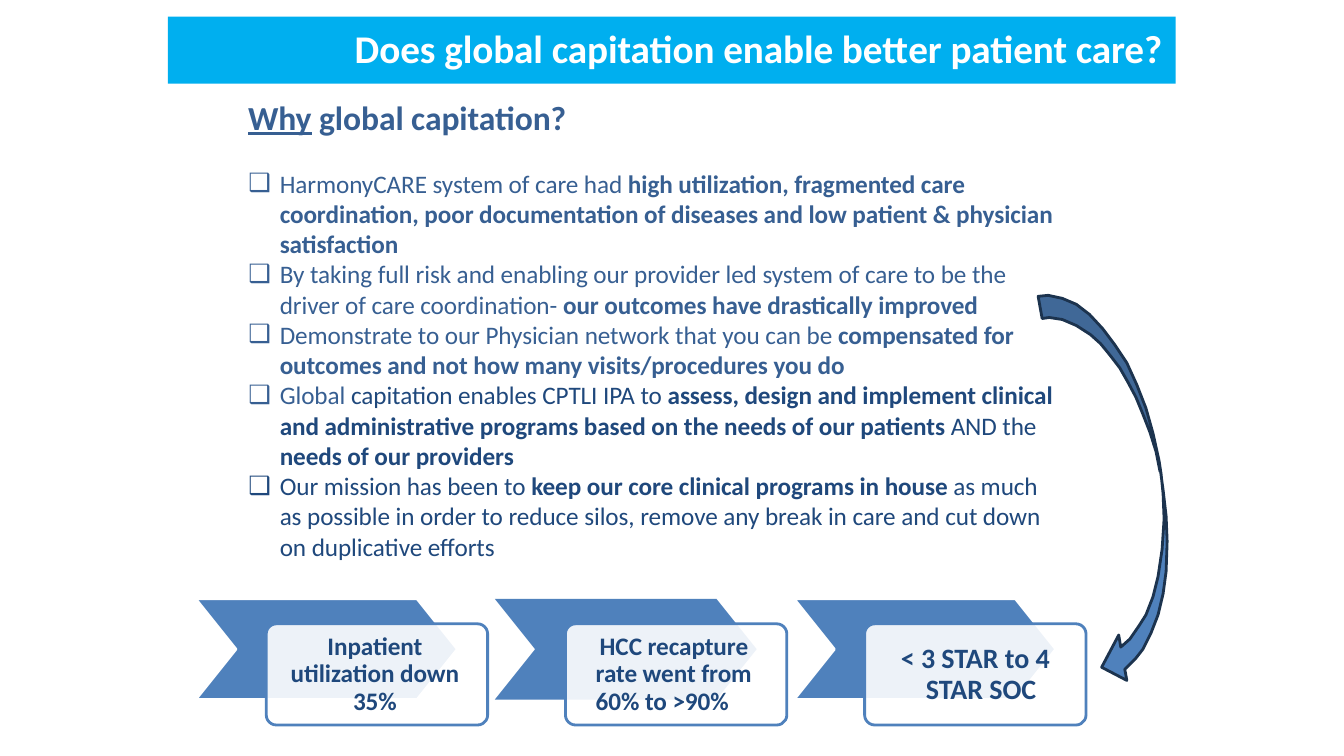
from dataclasses import dataclass
from typing import Optional

from lxml.etree import SubElement
from pptx import Presentation
from pptx.dml.color import RGBColor
from pptx.enum.shapes import MSO_SHAPE as Preset
from pptx.enum.text import MSO_ANCHOR as Anchor, MSO_AUTO_SIZE as AutoSize, PP_ALIGN as Align
from pptx.oxml.ns import qn
from pptx.util import Cm, Pt

COLORS = {
    "banner": "00AFEF",
    "white": "FFFFFF",
    "slate": "375F92",
    "navy": "1F487C",
    "blue": "4F81BC",
    "arrow_tail": "406897",
    "arrow_line": "1C334E",
}
FONT = "Calibri"


@dataclass(frozen=True)
class Span:
    text: str
    bold: bool = False
    underline: bool = False
    color: Optional[str] = None


@dataclass(frozen=True)
class Bullet:
    color: str
    spans: tuple[Span, ...]


@dataclass(frozen=True)
class Outcome:
    text: str
    size: float
    line_spacing: object
    left_inset: float
    right_inset: float = 0.3
    align: Align = Align.LEFT
    margin: float = 0
    indent: float = 0
    outlined: bool = True


BULLETS = (
    Bullet("slate", (
        Span("HarmonyCARE system of care had "),
        Span("high utilization, fragmented care coordination, poor documentation "
             "of diseases and low patient & physician satisfaction", True))),
    Bullet("slate", (
        Span("By taking full risk and enabling our provider led system of care "
             "to be the driver of care coordination- "),
        Span("our outcomes have drastically improved", True))),
    Bullet("slate", (
        Span("Demonstrate to our Physician network that you can be "),
        Span("compensated for outcomes and not how many visits/procedures you do", True))),
    Bullet("navy", (
        Span("Global ", color="slate"),
        Span("capitation enables CPTLI IPA to "),
        Span("assess, design and implement clinical and administrative programs "
             "based on the needs of our patients ", True),
        Span("AND the "),
        Span("needs of our providers", True))),
    Bullet("navy", (
        Span("Our mission has been to "),
        Span("keep our core clinical programs in house ", True),
        Span("as much as possible in order to reduce silos, remove any break "
             "in care and cut down on duplicative efforts"))),
)

OUTCOMES = (
    Outcome("Inpatient utilization down 35%", 18, 0.91, 0.4, 0.5, Align.CENTER),
    Outcome("HCC recapture rate went from 60% to >90%", 18, 0.91, 0.69,
            indent=0.1, outlined=False),
    Outcome("< 3 STAR to 4 STAR SOC", 20, Pt(22.1), 0.79, margin=0.68, indent=-0.63),
)

# Curved arrow edges, in hundredths of an inch
TAIL_INNER = [(1151, 468), (1147, 448), (1141, 429), (1134, 411), (1127, 394),
              (1119, 379), (1111, 365), (1101, 352), (1092, 341), (1082, 332),
              (1068, 323), (1054, 317), (1041, 315), (1034, 316)]
TAIL_OUTER = [(1030, 294), (1040, 293), (1054, 296), (1068, 302), (1081, 312),
              (1094, 326), (1106, 342), (1118, 360), (1128, 382), (1137, 405),
              (1144, 430), (1150, 457)]
HEAD_OUTER = [(1154, 486), (1157, 512), (1158, 537), (1157, 567), (1154, 589),
              (1149, 610), (1142, 628), (1134, 644), (1127, 653), (1116, 664)]
HEAD_TIP = [(1118, 675), (1093, 662), (1110, 630)]
HEAD_INNER = [(1112, 642), (1121, 634), (1130, 621), (1137, 610), (1144, 592),
              (1149, 572), (1153, 545), (1155, 515), (1154, 490), (1152, 470),
              (1150, 457)]
HEAD = HEAD_OUTER + HEAD_TIP + HEAD_INNER


def rgb(name: str) -> RGBColor:
    return RGBColor.from_string(COLORS[name])


def place(shape, left: float, top: float, width: float, height: float) -> None:
    shape.left, shape.top, shape.width, shape.height = map(Cm, (left, top, width, height))


def paint(shape, fill: Optional[str] = None, line: Optional[str] = None) -> None:
    shape.shadow.inherit = False
    if fill:
        shape.fill.solid()
        shape.fill.fore_color.rgb = rgb(fill)
    else:
        shape.fill.background()
    if line:
        shape.line.color.rgb = rgb(line)
        shape.line.width = Pt(2)
    else:
        shape.line.fill.background()


def set_frame(frame, left: float = 0, right: float = 0, anchor: Anchor = Anchor.TOP) -> None:
    frame.word_wrap = True
    frame.auto_size = AutoSize.NONE
    frame.vertical_anchor = anchor
    frame.margin_left, frame.margin_right = Cm(left), Cm(right)
    frame.margin_top = frame.margin_bottom = 0


def write(paragraph, spans: tuple[Span, ...], size: float, color: str, bold: Optional[bool] = None,
          margin: float = 0, indent: float = 0, align: Align = Align.LEFT) -> None:
    paragraph.alignment = align
    paragraph.space_before = Pt(0)
    font = paragraph.font
    font.name, font.size, font.bold = FONT, Pt(size), bold
    font.color.rgb = rgb(color)
    for span in spans:
        run = paragraph.add_run()
        run.text = span.text
        if bold is None:
            run.font.bold = span.bold
        if span.underline:
            run.font.underline = True
        if span.color:
            run.font.color.rgb = rgb(span.color)
        run._r.get_or_add_rPr().set("spc", "-5")
    properties = paragraph._p.get_or_add_pPr()
    properties.set("marL", str(Cm(margin)))
    properties.set("indent", str(Cm(indent)))


def set_bullet(paragraph, mark: Optional[str] = None) -> None:
    properties = paragraph._p.get_or_add_pPr()
    if mark:
        bullet = SubElement(properties, qn("a:buChar"), char=mark)
    else:
        bullet = SubElement(properties, qn("a:buNone"))
    properties.find(qn("a:defRPr")).addprevious(bullet)


def add_outcome(slide, outcome: Outcome, left: float) -> None:
    chevron = slide.shapes.add_shape(Preset.CHEVRON, Cm(left), Cm(15.09), Cm(6.6), Cm(2.54))
    chevron.adjustments[0] = 0.4
    paint(chevron, "blue", "white" if outcome.outlined else None)

    card = slide.shapes.add_shape(Preset.ROUNDED_RECTANGLE,
                                  Cm(left + 1.78), Cm(15.72), Cm(5.58), Cm(2.55))
    card.adjustments[0] = 0.1
    paint(card, "white", "blue")
    fill_color = card.fill._xPr.find(qn("a:solidFill"))[0]
    SubElement(fill_color, qn("a:alpha"), val="90000")
    frame = card.text_frame
    set_frame(frame, outcome.left_inset, outcome.right_inset, Anchor.MIDDLE)
    paragraph = frame.paragraphs[0]
    write(paragraph, (Span(outcome.text),), outcome.size, "navy", True,
          outcome.margin, outcome.indent, outcome.align)
    paragraph.line_spacing = outcome.line_spacing


def add_outline(slide, points: list[tuple[int, int]], fill: Optional[str] = None,
                line: Optional[str] = None) -> None:
    builder = slide.shapes.build_freeform(*points[0], scale=Cm(2.54) / 100)
    builder.add_line_segments(points[1:], close=fill is not None)
    paint(builder.convert_to_shape(), fill, line)


def main() -> None:
    presentation = Presentation()
    presentation.slide_width, presentation.slide_height = Cm(33.87), Cm(19.05)
    slide = presentation.slides.add_slide(presentation.slide_layouts[1])
    title, body = slide.shapes.title, slide.placeholders[1]

    # Banner and title
    banner = slide.shapes.add_shape(Preset.RECTANGLE, Cm(4.23), Cm(0.42), Cm(25.4), Cm(1.69))
    paint(banner, "banner")
    title._element.addprevious(banner._element)
    place(title, 4.52, 0.6, 29.3, 1.22)
    set_frame(title.text_frame)
    write(title.text_frame.paragraphs[0],
          (Span("Does global capitation enable better patient care?"),),
          28, "white", True, margin=4.42)

    # Heading and bullet list
    place(body, 6.22, 2.44, 20.57, 11.76)
    set_frame(body.text_frame)
    heading = body.text_frame.paragraphs[0]
    write(heading, (Span("Why", underline=True), Span(" global capitation?")),
          24, "slate", True, margin=0.03)
    heading.space_after = Pt(22)
    set_bullet(heading)
    for bullet in BULLETS:
        paragraph = body.text_frame.add_paragraph()
        write(paragraph, bullet.spans, 18, bullet.color, margin=0.83, indent=-0.79)
        set_bullet(paragraph, "❑")

    # Outcome chevrons with cards
    for index, outcome in enumerate(OUTCOMES):
        add_outcome(slide, outcome, 4.93 + 7.54 * index)

    # Curved arrow
    add_outline(slide, TAIL_OUTER[-1:] + HEAD, fill="blue")
    add_outline(slide, TAIL_INNER + TAIL_OUTER, fill="arrow_tail")
    add_outline(slide, TAIL_INNER + TAIL_OUTER + HEAD, line="arrow_line")

    presentation.save("out.pptx")


if __name__ == "__main__":
    main()
